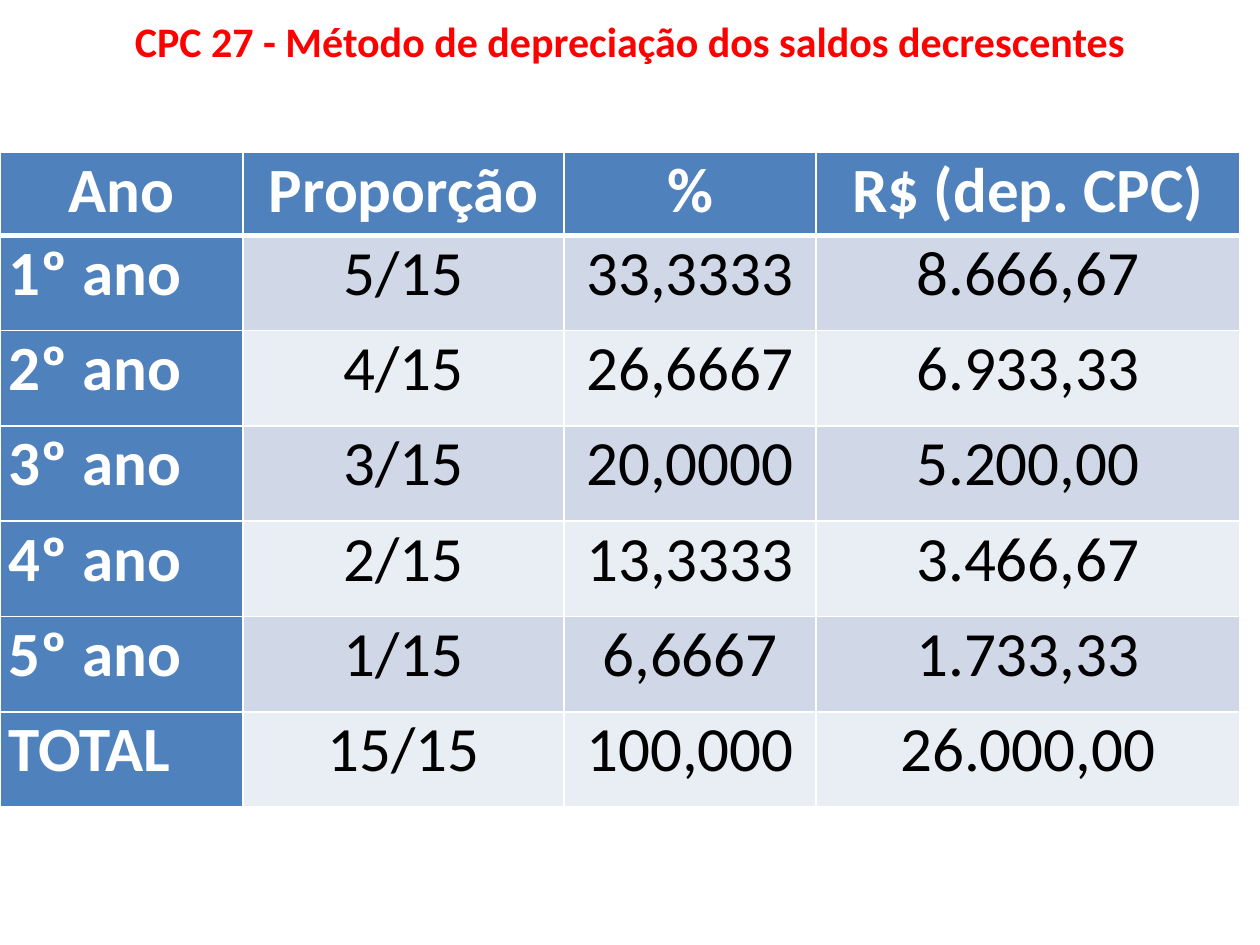
from lxml import etree
from pptx import Presentation
from pptx.dml.color import RGBColor
from pptx.enum.text import MSO_ANCHOR, PP_ALIGN
from pptx.oxml.ns import qn
from pptx.util import Pt

CENTER, JUSTIFY = PP_ALIGN.CENTER, PP_ALIGN.JUSTIFY
MIDDLE = MSO_ANCHOR.MIDDLE

TITLE = "CPC 27 - Método de depreciação dos saldos decrescentes"
ROWS = [
    ("Ano", "Proporção", "%", "R$ (dep. CPC)"),
    ("1º ano", "5/15", "33,3333", "8.666,67"),
    ("2º ano", "4/15", "26,6667", "6.933,33"),
    ("3º ano", "3/15", "20,0000", "5.200,00"),
    ("4º ano", "2/15", "13,3333", "3.466,67"),
    ("5º ano", "1/15", "6,6667", "1.733,33"),
    ("TOTAL", "15/15", "100,000", "26.000,00"),
]
COL_WIDTHS = [138.8, 183.6, 144, 242]
HEADER_HEIGHT, BODY_HEIGHT = 47.2, 54.5
TABLE_TOP = 87.2
RED, WHITE, BLACK, BLUE = "FF0000", "FFFFFF", "000000", "4F81BD"
BANDS = ["E9EDF4", "D0D8E8"]


def rgb(color):
    return RGBColor.from_string(color)


def add_text(tf, text, size, color, bold, align):
    p = tf.paragraphs[0]
    p.alignment = align
    r = p.add_run()
    r.text = text
    r.font.name = "Calibri"
    r.font.size = Pt(size)
    r.font.bold = bold
    r.font.color.rgb = rgb(color)


def add_border(cell, side, width):
    ln = etree.SubElement(cell._tc.get_or_add_tcPr(), qn(f"a:ln{side}"), w=str(Pt(width)))
    fill = etree.SubElement(ln, qn("a:solidFill"))
    etree.SubElement(fill, qn("a:srgbClr"), val=WHITE)


def fill_cell(cell, text, row, col):
    cell.margin_left = cell.margin_right = Pt(5)
    cell.margin_top = cell.margin_bottom = 0
    widths = {"L": 1, "R": 1, "T": 3 if row == 1 else 1, "B": 3 if row == 0 else 1}
    for side, width in widths.items():
        add_border(cell, side, width)
    heading = row == 0 or col == 0
    cell.fill.solid()
    cell.fill.fore_color.rgb = rgb(BLUE if heading else BANDS[row % 2])
    align = JUSTIFY if col == 0 and row > 0 else CENTER
    add_text(cell.text_frame, text, 36, WHITE if heading else BLACK, heading, align)


prs = Presentation()
prs.slide_width, prs.slide_height = Pt(720), Pt(540)
s = prs.slides.add_slide(prs.slide_layouts[6])

title = s.shapes.add_textbox(Pt(36), 0, Pt(648), Pt(46))
tf = title.text_frame
tf.word_wrap = True
tf.vertical_anchor = MIDDLE
add_text(tf, TITLE, 24, RED, True, CENTER)

heights = [HEADER_HEIGHT] + [BODY_HEIGHT] * (len(ROWS) - 1)
table = s.shapes.add_table(len(ROWS), len(COL_WIDTHS), 0, Pt(TABLE_TOP),
                           Pt(sum(COL_WIDTHS)), Pt(sum(heights))).table
table.first_col = True
for column, width in zip(table.columns, COL_WIDTHS):
    column.width = Pt(width)
for i, (values, height) in enumerate(zip(ROWS, heights)):
    table.rows[i].height = Pt(height)
    for j, value in enumerate(values):
        fill_cell(table.cell(i, j), value, i, j)

prs.save("out.pptx")
